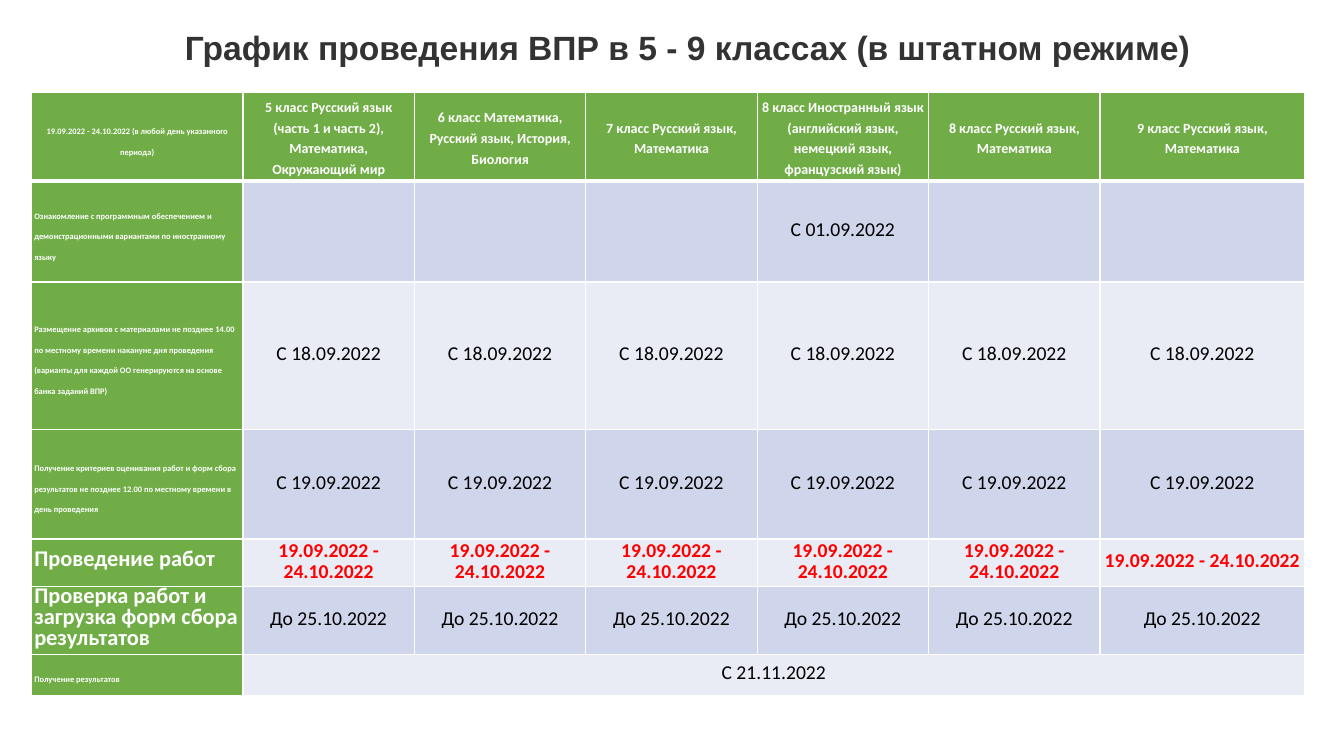
"""Build the slide with the test schedule for grades 5 to 9."""
from dataclasses import dataclass

from lxml.etree import SubElement
from pptx import Presentation
from pptx.dml.color import RGBColor
from pptx.enum.text import MSO_ANCHOR as Anchor, MSO_AUTO_SIZE as AutoSize, PP_ALIGN as Align
from pptx.oxml.ns import qn
from pptx.slide import Slide
from pptx.table import _Cell as Cell
from pptx.text.text import TextFrame
from pptx.util import Inches, Pt

GREEN, WHITE, BLACK, RED = "70AD47", "FFFFFF", "000000", "FF0000"
BANDS = ("CFD5EA", "E9EBF5")
COLUMN_WIDTHS = [2.1] + [1.7] * 5 + [2.03]
HEADER_HEIGHT = 0.8
PERIOD = "19.09.2022 - 24.10.2022"
HEADINGS = (
    f"{PERIOD} (в любой день указанного периода)",
    "5 класс Русский язык (часть 1 и часть 2), Математика, Окружающий мир",
    "6 класс Математика, Русский язык, История, Биология",
    "7 класс Русский язык, Математика",
    "8 класс Иностранный язык (английский язык, немецкий язык, французский язык)",
    "8 класс Русский язык, Математика",
    "9 класс Русский язык, Математика",
)


@dataclass
class Stage:
    label: str
    height: float
    dates: list[str]
    label_size: int = 6
    color: str = BLACK
    bold: bool = False
    merged: bool = False


STAGES = (
    Stage("Ознакомление с программным обеспечением и демонстрационными "
          "вариантами по иностранному языку", 1, ["", "", "", "С 01.09.2022", "", ""]),
    Stage("Размещение архивов с материалами не позднее 14.00 по местному времени "
          "накануне дня проведения (варианты для каждой ОО генерируются на основе "
          "банка заданий ВПР)", 1.46, ["С 18.09.2022"] * 6),
    Stage("Получение критериев оценивания работ и форм сбора результатов не позднее "
          "12.00 по местному времени в день проведения", 1.09, ["С 19.09.2022"] * 6),
    Stage("Проведение работ", 0.26, [PERIOD] * 6, label_size=16, color=RED, bold=True),
    Stage("Проверка работ и загрузка форм сбора результатов", 0.61,
          ["До 25.10.2022"] * 6, label_size=16),
    Stage("Получение результатов", 0.41, ["С 21.11.2022"] + [""] * 5, merged=True),
)


def rgb(color: str) -> RGBColor:
    return RGBColor.from_string(color)


def write(frame: TextFrame, text: str, *, size: float, color: str = WHITE, bold: bool = True,
          font: str = "Calibri", align: Align = Align.CENTER, spacing: float | None = None) -> None:
    para = frame.paragraphs[0]
    para.alignment = align
    if spacing:
        para.line_spacing = Pt(spacing)
    span = para.add_run()
    span.text = text
    span.font.name = font
    span.font.size = Pt(size)
    span.font.bold = bold
    span.font.color.rgb = rgb(color)


def style_cell(cell: Cell, fill: str, top: int = 1, bottom: int = 1) -> None:
    properties = cell._tc.get_or_add_tcPr()
    for side, width in {"L": 1, "R": 1, "T": top, "B": bottom}.items():
        line = SubElement(properties, qn(f"a:ln{side}"), w=str(Pt(width)))
        SubElement(SubElement(line, qn("a:solidFill")), qn("a:srgbClr"), val=WHITE)
    cell.fill.solid()
    cell.fill.fore_color.rgb = rgb(fill)
    cell.vertical_anchor = Anchor.MIDDLE
    cell.margin_left = cell.margin_right = Inches(0.03)
    cell.margin_top = cell.margin_bottom = Inches(0.03)


def add_title(page: Slide) -> None:
    box = page.shapes.add_textbox(Inches(0.65), Inches(0.22), Inches(12.34), Inches(0.5))
    frame = box.text_frame
    frame.word_wrap = True
    frame.auto_size = AutoSize.SHAPE_TO_FIT_TEXT
    frame.vertical_anchor = Anchor.MIDDLE
    write(frame, "График проведения ВПР в 5 - 9 классах (в штатном режиме)",
          size=24, color="333333", font="Arial")


def add_schedule(page: Slide) -> None:
    heights = [HEADER_HEIGHT] + [stage.height for stage in STAGES]
    table = page.shapes.add_table(
        len(heights), len(COLUMN_WIDTHS), Inches(0.31), Inches(0.92),
        Inches(sum(COLUMN_WIDTHS)), Inches(sum(heights))).table
    table.horz_banding = False
    for column, width in zip(table.columns, COLUMN_WIDTHS):
        column.width = Inches(width)
    for row, height in zip(table.rows, heights):
        row.height = Inches(height)

    for index, heading in enumerate(HEADINGS):
        cell = table.cell(0, index)
        style_cell(cell, GREEN, bottom=3)
        write(cell.text_frame, heading, size=10 if index else 6, spacing=14.7)

    for number, stage in enumerate(STAGES, 1):
        top = 3 if number == 1 else 1
        label = table.cell(number, 0)
        style_cell(label, GREEN, top=top)
        write(label.text_frame, stage.label, size=stage.label_size, align=Align.LEFT, spacing=14.7)
        for index, date in enumerate(stage.dates, 1):
            cell = table.cell(number, index)
            style_cell(cell, BANDS[(number - 1) % 2], top=top)
            if date:
                write(cell.text_frame, date, size=14, color=stage.color,
                      bold=stage.bold, spacing=14.7)
        if stage.merged:
            table.cell(number, 1).merge(table.cell(number, len(stage.dates)))


def main() -> None:
    deck = Presentation()
    deck.slide_width, deck.slide_height = Inches(13.33), Inches(7.5)
    page = deck.slides.add_slide(deck.slide_layouts[6])
    add_schedule(page)
    add_title(page)
    deck.save("out.pptx")


if __name__ == "__main__":
    main()
